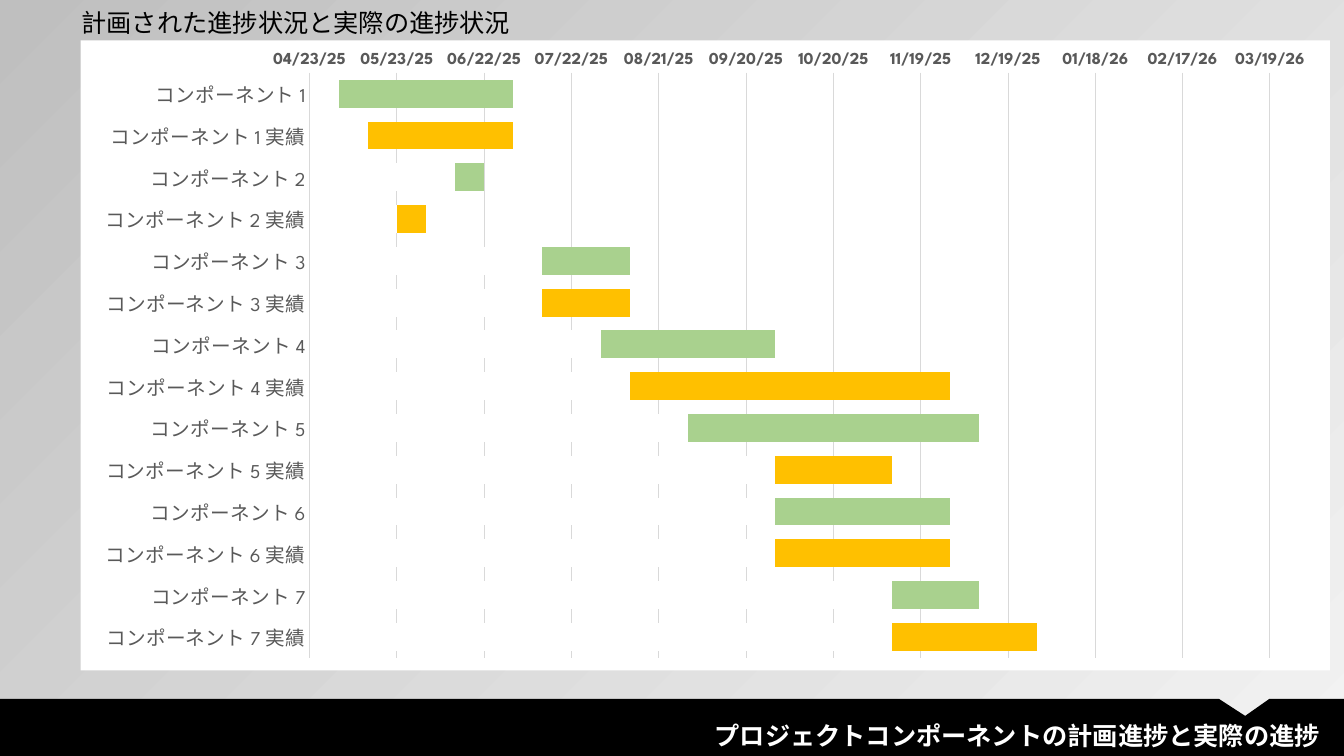
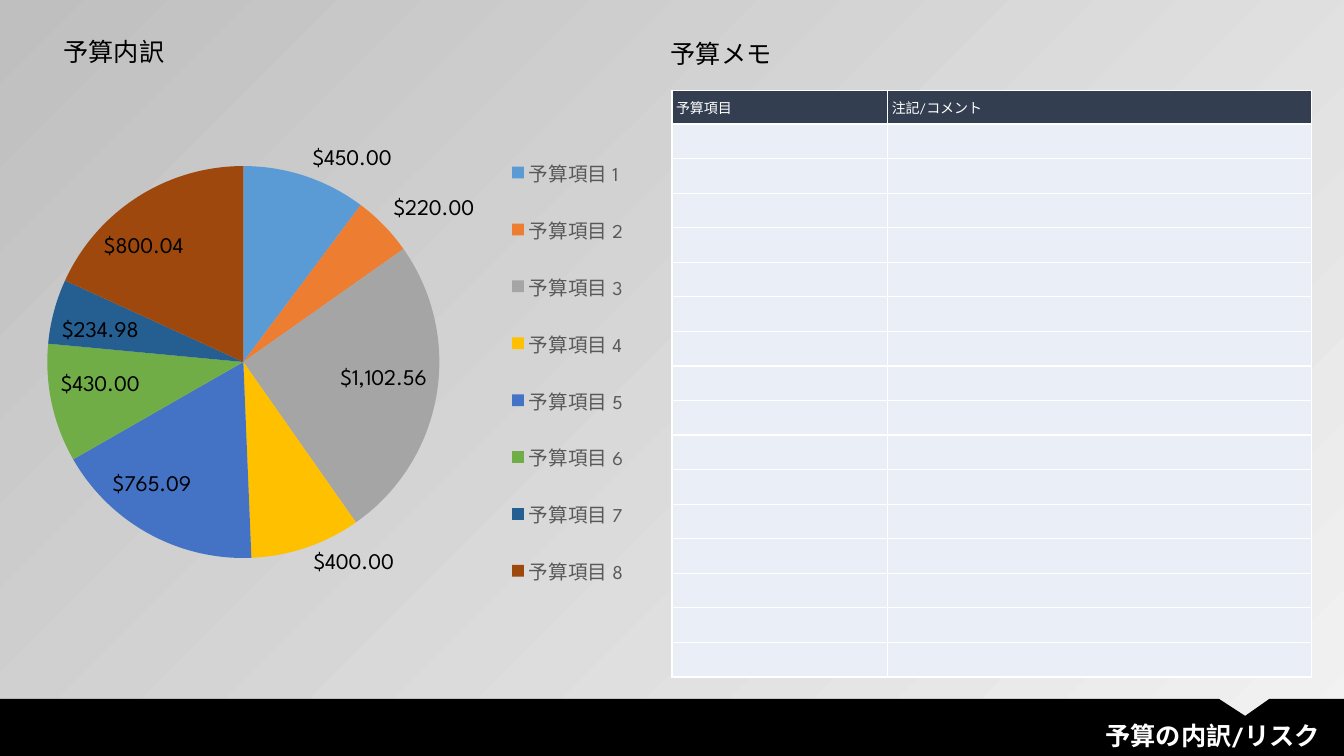
from pptx import Presentation
from pptx.chart.data import CategoryChartData
from pptx.dml.color import RGBColor
from pptx.enum.chart import XL_CHART_TYPE, XL_LABEL_POSITION, XL_LEGEND_POSITION, XL_TICK_MARK
from pptx.enum.text import MSO_ANCHOR, MSO_AUTO_SIZE, PP_ALIGN
from pptx.oxml import parse_xml
from pptx.oxml.ns import nsdecls, qn
from pptx.util import Inches, Pt

FONT = "League Spartan"
HEX = {
    "ink": "000000", "white": "FFFFFF", "gray": "595959", "grid": "D9D9D9",
    "light": "F2F2F2", "shade": "BFBFBF", "planned": "A9D18E", "actual": "FFC000",
    "header": "333F50", "cell": "EAEFF7",
}
SLICES = ["5B9BD5", "ED7D31", "A5A5A5", "FFC000", "4472C4", "70AD47", "255E91", "9E480E"]
COLOR = {name: RGBColor.from_string(value) for name, value in HEX.items()}

deck = Presentation()
deck.slide_width, deck.slide_height = Inches(13.33), Inches(7.5)


def place(left, top, width, height):
    """Turn percentages of the slide into lengths."""
    return (int(deck.slide_width * left / 100), int(deck.slide_height * top / 100),
            int(deck.slide_width * width / 100), int(deck.slide_height * height / 100))


def add_chart(page, kind, bounds, data, fill):
    chart = page.shapes.add_chart(kind, *place(*bounds), data).chart
    chart.has_title = False
    chart.font.name, chart.font.size = FONT, Pt(14)
    chart.font.color.rgb = COLOR["ink"]
    chart.element.find(qn("c:chart")).addnext(parse_xml(
        f'<c:spPr {nsdecls("c", "a")}>{fill}<a:ln><a:noFill/></a:ln></c:spPr>'))
    return chart


# Shared background
background = deck.slide_master.background.fill
background.gradient()
background.gradient_angle = 135
for stop, name in zip(background.gradient_stops, ["light", "shade"]):
    stop.color.rgb = COLOR[name]

# Band, title and headings of each page
PAGES = [
    ("プロジェクトコンポーネントの計画進捗と実際の進捗",
     [("計画された進捗状況と実際の進捗状況", 5.33, 0.35)]),
    ("予算の内訳/リスク",
     [("予算内訳", 3.98, 4.13), ("予算メモ", 49.16, 4.4)]),
]
# Band outline in hundredths of a percent of the slide
UNITS = 10000
BAND_TOP = 9245
BAND_OUTLINE = [(9070, BAND_TOP), (9265, 9470), (9445, BAND_TOP),
                (UNITS, BAND_TOP), (UNITS, UNITS), (0, UNITS)]

for title_text, headings in PAGES:
    page = deck.slides.add_slide(deck.slide_layouts[5])
    builder = page.shapes.build_freeform(
        0, BAND_TOP, scale=(deck.slide_width / UNITS, deck.slide_height / UNITS))
    builder.add_line_segments(BAND_OUTLINE, close=True)
    band = builder.convert_to_shape()
    band.shadow.inherit = False
    band.fill.solid()
    band.fill.fore_color.rgb = COLOR["ink"]
    band.line.fill.background()

    title = page.shapes.title
    title.left, title.top, title.width, title.height = place(20.1, 94.55, 78.84, 5.33)
    title.element.getparent().append(title.element)  # in front of the band
    title.text_frame.text = title_text
    title.text_frame.auto_size = MSO_AUTO_SIZE.NONE
    title.text_frame.vertical_anchor = MSO_ANCHOR.MIDDLE
    para = title.text_frame.paragraphs[0]
    para.alignment = PP_ALIGN.RIGHT
    para.font.name, para.font.size, para.font.bold = FONT, Pt(18), True
    para.font.color.rgb = COLOR["white"]

    for heading, left, top in headings:
        box = page.shapes.add_textbox(*place(left, top, 36, 5.33))
        box.text_frame.word_wrap = True
        para = box.text_frame.paragraphs[0]
        para.text = heading
        para.font.name, para.font.size = FONT, Pt(18)
        para.font.color.rgb = COLOR["ink"]

schedule_page, budget_page = deck.slides

# Schedule: first and last day of each bar, counted from the start of the axis
AXIS_START, AXIS_DAYS, AXIS_STEP = 45770, 330, 30
SPANS = [(10, 70), (20, 70), (50, 60), (30, 40), (80, 110), (80, 110), (100, 160),
         (110, 220), (130, 230), (160, 200), (160, 220), (160, 220), (200, 230), (200, 250)]

data = CategoryChartData()
data.categories = [f"コンポーネント {number}{suffix}"
                   for number in range(1, 8) for suffix in ("", " 実績")]
data.add_series("終了", [AXIS_START + last for first, last in SPANS])
data.add_series("開始", [AXIS_START + first for first, last in SPANS])
white_fill = f'<a:solidFill><a:srgbClr val="{HEX["white"]}"/></a:solidFill>'
chart = add_chart(schedule_page, XL_CHART_TYPE.BAR_CLUSTERED,
                  (6, 5.35, 92.95, 83.33), data, white_fill)
chart.has_legend = False

plot = chart.plots[0]
plot.vary_by_categories = False
plot.gap_width, plot.overlap = 50, 100
finish, start = plot.series
for series, name in [(finish, "actual"), (start, "white")]:
    series.invert_if_negative = False
    series.format.fill.solid()
    series.format.fill.fore_color.rgb = COLOR[name]
for index in range(0, len(SPANS), 2):
    bar_fill = finish.points[index].format.fill
    bar_fill.solid()
    bar_fill.fore_color.rgb = COLOR["planned"]

components, dates = chart.category_axis, chart.value_axis
for axis, size, bold in [(components, 14, False), (dates, 12, True)]:
    axis.major_tick_mark = axis.minor_tick_mark = XL_TICK_MARK.NONE
    font = axis.tick_labels.font
    font.name, font.size, font.bold = FONT, Pt(size), bold
    font.color.rgb = COLOR["gray"]
components.reverse_order = True
dates.minimum_scale, dates.maximum_scale = AXIS_START, AXIS_START + AXIS_DAYS
dates.major_unit = AXIS_STEP
dates.tick_labels.number_format = "mm/dd/yy;@"
dates.tick_labels.number_format_is_linked = False
dates.format.line.fill.background()
for line in (components.format.line, dates.major_gridlines.format.line):
    line.color.rgb = COLOR["grid"]
    line.width = Pt(0.75)

# Budget pie
data = CategoryChartData()
data.categories = [f"予算項目 {number}" for number in range(1, 9)]
data.add_series("予算", [450, 220, 1102.56, 400, 765.09, 430, 234.98, 800.04])
chart = add_chart(budget_page, XL_CHART_TYPE.PIE, (0, 2.67, 50.3, 85.33), data, "<a:noFill/>")

plot = chart.plots[0]
plot.vary_by_categories = True
for index, value in enumerate(SLICES):
    piece = plot.series[0].points[index].format
    piece.fill.solid()
    piece.fill.fore_color.rgb = RGBColor.from_string(value)
    piece.line.fill.background()

plot.has_data_labels = True
labels = plot.data_labels
labels.show_value, labels.show_percentage = True, False
labels.number_format = '_("$"* #,##0.00_)'
labels.number_format_is_linked = False
labels.position = XL_LABEL_POSITION.BEST_FIT
labels.font.name, labels.font.size = FONT, Pt(16)
labels.font.color.rgb = COLOR["ink"]

chart.has_legend = True
legend = chart.legend
legend.position, legend.include_in_layout = XL_LEGEND_POSITION.RIGHT, False
legend.font.name, legend.font.size = FONT, Pt(14)
legend.font.color.rgb = COLOR["gray"]

# Fixed areas for the pie and its legend, as shares of the chart
for tag, position, target, area in [
        ("c:plotArea", 0, '<c:layoutTarget val="inner"/>', (0.07, 0.06, 0.58, 0.94)),
        ("c:legend", 1, "", (0.73, 0.17, 0.22, 0.75))]:
    parent = chart.element.find(f".//{qn(tag)}")
    for old_layout in parent.findall(qn("c:layout")):
        parent.remove(old_layout)
    x, y, width, height = area
    parent.insert(position, parse_xml(
        f'<c:layout {nsdecls("c")}><c:manualLayout>{target}'
        '<c:xMode val="edge"/><c:yMode val="edge"/>'
        f'<c:x val="{x}"/><c:y val="{y}"/><c:w val="{width}"/><c:h val="{height}"/>'
        '</c:manualLayout></c:layout>'))

# Budget notes
ROWS = 17
frame = budget_page.shapes.add_table(ROWS, 2, *place(50, 12, 47.56, 77.6))
table = frame.table
table.first_row = table.horz_banding = False
for column, width in zip(table.columns, [2.14, 4.2]):
    column.width = Inches(width)
header_height = Inches(0.33)
for index, row in enumerate(table.rows):
    row.height = (Inches(5.82) - header_height) // (ROWS - 1) if index else header_height
for cell in table.iter_cells():
    cell.margin_left = Inches(0.04)
    cell.margin_right = cell.margin_top = cell.margin_bottom = 0
    cell.vertical_anchor = MSO_ANCHOR.MIDDLE
    cell.fill.solid()
    cell.fill.fore_color.rgb = COLOR["cell"]
for index, label in enumerate(["予算項目", "注記/コメント"]):
    cell = table.cell(0, index)
    cell.text = label
    cell.fill.fore_color.rgb = COLOR["header"]
    para = cell.text_frame.paragraphs[0]
    para.font.name, para.font.size, para.font.bold = FONT, Pt(10), False
    para.font.color.rgb = COLOR["white"]
for properties in frame.element.iter(qn("a:tcPr")):
    for index, side in enumerate(["lnL", "lnR", "lnT", "lnB"]):
        properties.insert(index, parse_xml(
            f'<a:{side} {nsdecls("a")} w="{Pt(1)}">{white_fill}</a:{side}>'))

deck.save("out.pptx")
